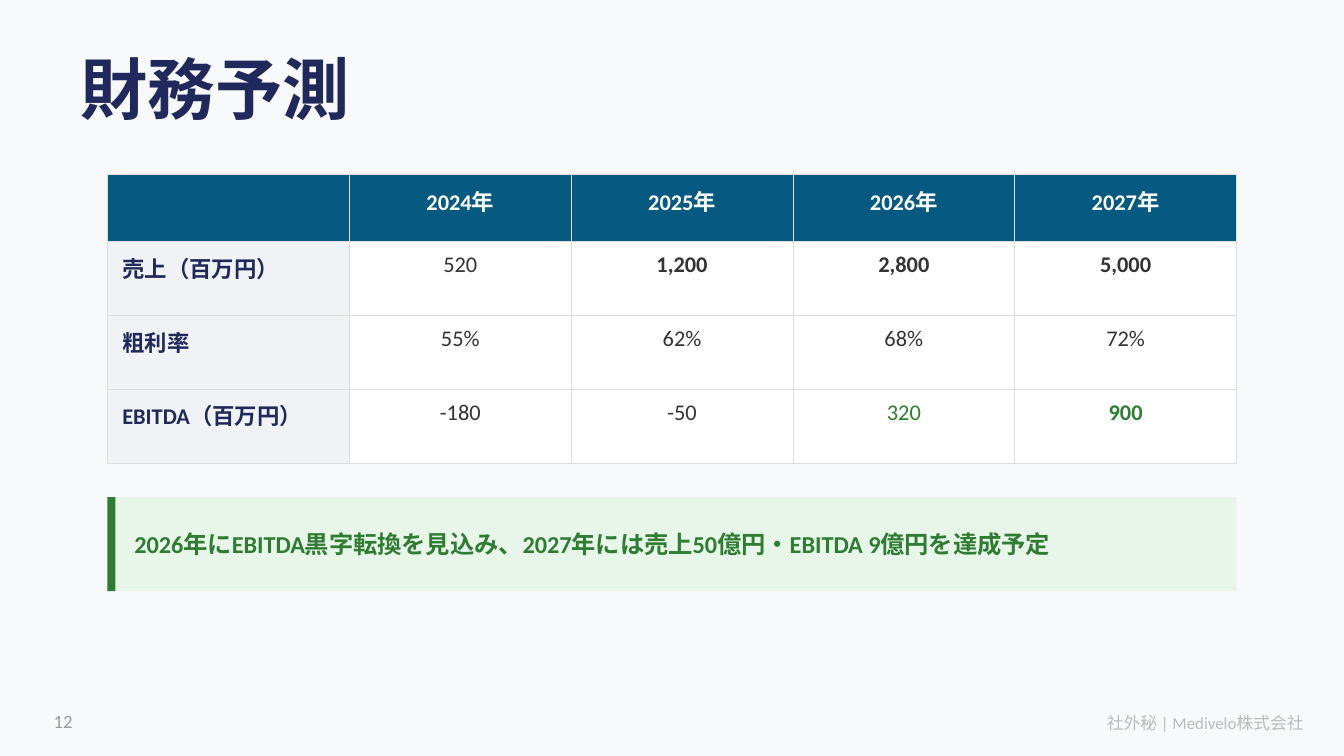
from lxml import etree
from pptx import Presentation
from pptx.dml.color import RGBColor
from pptx.enum.shapes import MSO_SHAPE
from pptx.enum.text import MSO_ANCHOR, MSO_AUTO_SIZE, PP_ALIGN
from pptx.oxml.ns import qn
from pptx.util import Inches, Pt

RECT = MSO_SHAPE.RECTANGLE
MIDDLE, BOTTOM = MSO_ANCHOR.MIDDLE, MSO_ANCHOR.BOTTOM
LEFT, CENTER, RIGHT = PP_ALIGN.LEFT, PP_ALIGN.CENTER, PP_ALIGN.RIGHT
NO_FIT = MSO_AUTO_SIZE.NONE

PAPER = RGBColor(0xF8, 0xF9, 0xFA)
NAVY = RGBColor(0x21, 0x29, 0x5C)
TEAL = RGBColor(0x06, 0x5A, 0x82)
WHITE = RGBColor(0xFF, 0xFF, 0xFF)
STUB = RGBColor(0xF0, 0xF2, 0xF5)
INK = RGBColor(0x33, 0x33, 0x33)
GREEN = RGBColor(0x2E, 0x7D, 0x32)
MINT = RGBColor(0xE8, 0xF5, 0xE9)
GRID = RGBColor(0xDD, 0xDD, 0xDD)
GRAY = RGBColor(0x99, 0x99, 0x99)
PALE = RGBColor(0xBB, 0xBB, 0xBB)

HEAD_FONT, BODY_FONT = "TeX Gyre Schola", "Calibri"

ROWS = [
    ["", "2024年", "2025年", "2026年", "2027年"],
    ["売上（百万円）", "520", "1,200", "2,800", "5,000"],
    ["粗利率", "55%", "62%", "68%", "72%"],
    ["EBITDA（百万円）", "-180", "-50", "320", "900"],
]
STRONG = {"1,200", "2,800", "5,000", "900"}
PROFIT = {"320", "900"}


def style(para, size, color, bold=False, align=LEFT, face=BODY_FONT):
    para.alignment = align
    font = para.font
    font.name, font.size, font.bold = face, Pt(size), bold
    font.color.rgb = color


def set_frame(frame, anchor):
    """Fixed, wrapping frame with no insets."""
    frame.word_wrap = True
    frame.auto_size = NO_FIT
    frame.vertical_anchor = anchor
    frame.margin_left = frame.margin_right = 0
    frame.margin_top = frame.margin_bottom = 0


def add_label(slide, box, text, anchor, *look):
    frame = slide.shapes.add_textbox(*map(Inches, box)).text_frame
    set_frame(frame, anchor)
    frame.text = text
    style(frame.paragraphs[0], *look)


def add_block(slide, box, color):
    block = slide.shapes.add_shape(RECT, *map(Inches, box))
    block.shadow.inherit = False
    block.fill.solid()
    block.fill.fore_color.rgb = color
    block.line.fill.background()


def add_title(slide, box, text):
    title = slide.shapes.title
    title.left, title.top, title.width, title.height = map(Inches, box)
    set_frame(title.text_frame, MIDDLE)
    title.text_frame.text = text
    style(title.text_frame.paragraphs[0], 36, NAVY, True, LEFT, HEAD_FONT)


def add_borders(cell):
    props = cell._tc.get_or_add_tcPr()
    for side in ("lnL", "lnR", "lnT", "lnB"):
        line = etree.SubElement(props, qn(f"a:{side}"), w=str(Pt(0.5)))
        fill = etree.SubElement(line, qn("a:solidFill"))
        etree.SubElement(fill, qn("a:srgbClr"), val=str(GRID))


def cell_look(row, col, text):
    """Fill, text colour, bold and alignment of a cell."""
    if row == 0:
        return TEAL, WHITE, True, CENTER
    if col == 0:
        return STUB, NAVY, True, LEFT
    return WHITE, GREEN if text in PROFIT else INK, text in STRONG, CENTER


def add_forecast(slide, box, rows):
    left, top, width, height = box
    stub, head = 1.8, 0.5
    count = len(rows[0])
    table = slide.shapes.add_table(len(rows), count, *map(Inches, box)).table
    table.horz_banding = False
    for i, col in enumerate(table.columns):
        col.width = Inches((width - stub) / (count - 1) if i else stub)
    for i, row in enumerate(table.rows):
        row.height = Inches((height - head) / (len(rows) - 1) if i else head)
    for r, row in enumerate(rows):
        for c, text in enumerate(row):
            cell = table.cell(r, c)
            fill, color, bold, align = cell_look(r, c, text)
            cell.margin_left = cell.margin_right = Inches(0.11)
            cell.margin_top = cell.margin_bottom = Inches(0.07)
            add_borders(cell)
            cell.fill.solid()
            cell.fill.fore_color.rgb = fill
            cell.text = text
            style(cell.text_frame.paragraphs[0], 12, color, bold, align)


def add_callout(slide, box, text):
    left, top, width, height = box
    add_block(slide, box, MINT)
    add_block(slide, (left, top, 0.06, height), GREEN)
    inner = (left + 0.2, top, width - 0.4, height)
    add_label(slide, inner, text, MIDDLE, 13, GREEN, True)


def add_footer(slide, box, number, note):
    left, top, width, height = box
    add_label(slide, (left, top, 0.5, height), number, BOTTOM, 10, GRAY)
    span = 2.7
    add_label(slide, (left + width - span, top, span, height), note,
              BOTTOM, 9, PALE, False, RIGHT)


def main():
    deck = Presentation()
    deck.slide_width, deck.slide_height = Inches(10), Inches(10 * 9 / 16)
    slide = deck.slides.add_slide(deck.slide_layouts[5])
    slide.background.fill.solid()
    slide.background.fill.fore_color.rgb = PAPER
    add_title(slide, (0.6, 0.3, 9, 0.7), "財務予測")
    add_forecast(slide, (0.8, 1.3, 8.4, 2.15), ROWS)
    add_callout(slide, (0.8, 3.7, 8.4, 0.7),
                "2026年にEBITDA黒字転換を見込み、"
                "2027年には売上50億円・EBITDA 9億円を達成予定")
    add_footer(slide, (0.4, 5.15, 9.3, 0.3), "12", "社外秘 | Medivelo株式会社")
    deck.save("out.pptx")


if __name__ == "__main__":
    main()
